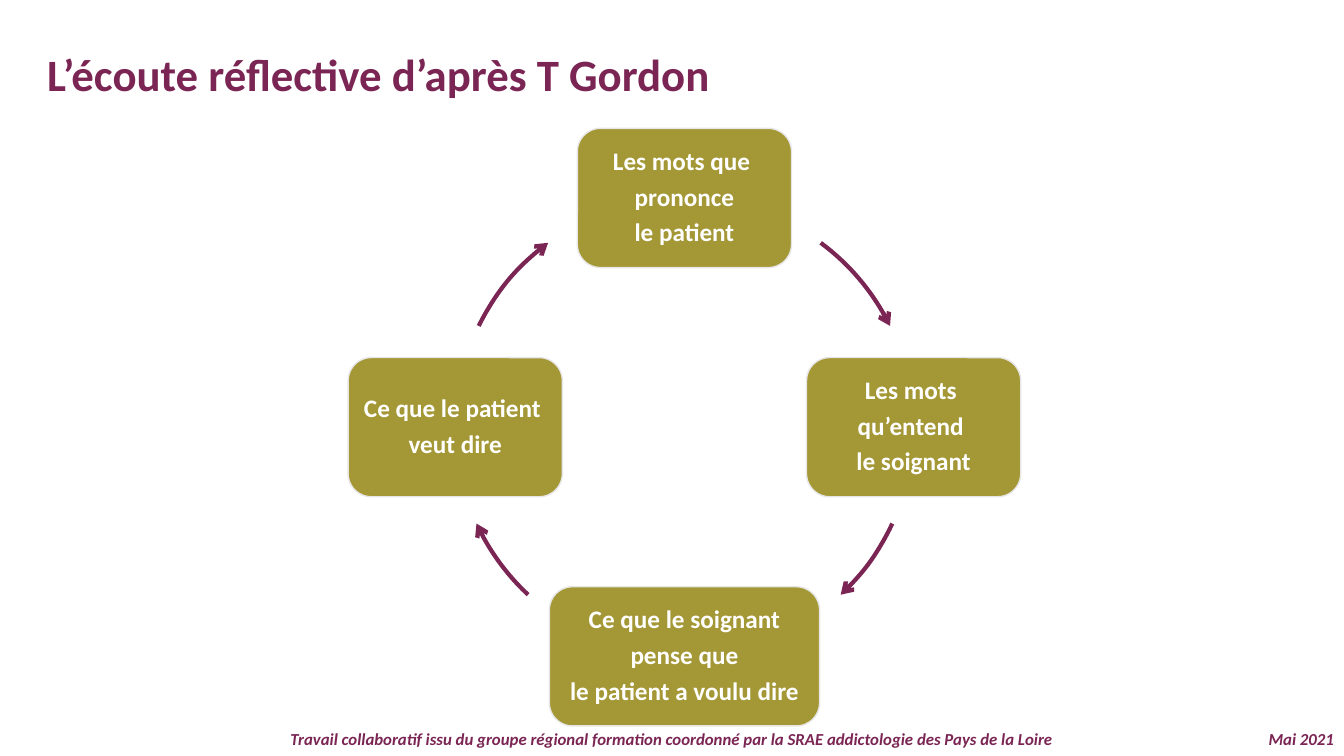
import math

import pptx
import pptx.dml.color
import pptx.enum.shapes
import pptx.enum.text
import pptx.oxml.ns
import pptx.util
from lxml import etree

Pt = pptx.util.Pt
PP_ALIGN = pptx.enum.text.PP_ALIGN
PLUM = pptx.dml.color.RGBColor(0x7A, 0x25, 0x53)
OLIVE = pptx.dml.color.RGBColor(0xA4, 0x97, 0x35)
PALE_GREY = pptx.dml.color.RGBColor(0xE7, 0xE6, 0xE6)
WHITE = pptx.dml.color.RGBColor(0xFF, 0xFF, 0xFF)

CENTER_X, CENTER_Y, RADIUS = 488.9, 305.1, 163.7
STEPS = [
    (270, 153, ["Les mots que ", "prononce", "le patient"], (306.5, 333.8)),
    (0, 153, ["Les mots ", "qu’entend ", "le soignant"], (24.9, 47)),
    (90, 193, ["Ce que le soignant", "pense que", "le patient a voulu dire"], (133, 155.1)),
    (180, 153, ["Ce que le patient ", "veut dire"], (206.2, 233.5)),
]


class CyclePage:
    """Draws the titles, steps and arrows of a cycle on one slide."""

    font_name = "Calibri"
    step_height = 99.4

    def __init__(self, page):
        self.shapes = page.shapes

    def set_text(self, frame, lines, size, color, align, spacing=1.0, after=0, italic=False):
        frame.word_wrap = True
        frame.text = "\n".join(lines)
        for para in frame.paragraphs:
            para.alignment = align
            para.line_spacing = spacing
            para.space_after = Pt(after)
            for span in para.runs:
                span.font.name = self.font_name
                span.font.size = Pt(size)
                span.font.bold = True
                span.font.italic = italic
                span.font.color.rgb = color

    def label(self, left, top, width, height, text, size, align, **style):
        box = self.shapes.add_textbox(Pt(left), Pt(top), Pt(width), Pt(height))
        self.set_text(box.text_frame, [text], size, PLUM, align, **style)

    def step(self, angle, width, lines):
        x = CENTER_X + RADIUS * math.cos(math.radians(angle))
        y = CENTER_Y + RADIUS * math.sin(math.radians(angle))
        box = self.shapes.add_shape(
            pptx.enum.shapes.MSO_SHAPE.ROUNDED_RECTANGLE,
            Pt(x - width / 2), Pt(y - self.step_height / 2), Pt(width), Pt(self.step_height))
        box.shadow.inherit = False
        box.fill.solid()
        box.fill.fore_color.rgb = OLIVE
        box.line.color.rgb = PALE_GREY
        box.line.width = Pt(1)
        frame = box.text_frame
        frame.margin_left = frame.margin_right = Pt(5)
        frame.margin_top = frame.margin_bottom = Pt(5)
        frame.vertical_anchor = pptx.enum.text.MSO_ANCHOR.MIDDLE
        self.set_text(frame, lines, 18, WHITE, PP_ALIGN.CENTER, spacing=0.9, after=6)

    def arrow(self, start, end):
        arc = self.shapes.add_shape(
            pptx.enum.shapes.MSO_SHAPE.ARC,
            Pt(CENTER_X - RADIUS), Pt(CENTER_Y - RADIUS), Pt(2 * RADIUS), Pt(2 * RADIUS))
        arc.shadow.inherit = False
        arc.adjustments[0] = start * 0.6
        arc.adjustments[1] = end * 0.6
        arc.fill.background()
        arc.line.color.rgb = PLUM
        arc.line.width = Pt(3)
        outline = arc.element.spPr.find(pptx.oxml.ns.qn("a:ln"))
        etree.SubElement(outline, pptx.oxml.ns.qn("a:tailEnd"), type="arrow")


def main():
    deck = pptx.Presentation()
    deck.slide_width, deck.slide_height = Pt(960), Pt(540)
    cycle = CyclePage(deck.slides.add_slide(deck.slide_layouts[6]))
    cycle.label(0, 518.4, 960, 21.6,
                "Travail collaboratif issu du groupe régional formation coordonné "
                "par la SRAE addictologie des Pays de la Loire",
                12, PP_ALIGN.CENTER, spacing=0.9, italic=True)
    cycle.label(881.3, 518.4, 78.7, 21.6, "Mai 2021",
                12, PP_ALIGN.RIGHT, spacing=0.9, italic=True)
    cycle.label(26.6, 29.5, 933.4, 46, "L’écoute réflective d’après T Gordon",
                32, PP_ALIGN.LEFT)
    for angle, width, lines, sweep in STEPS:
        cycle.step(angle, width, lines)
        cycle.arrow(*sweep)
    deck.save("out.pptx")


if __name__ == "__main__":
    main()
